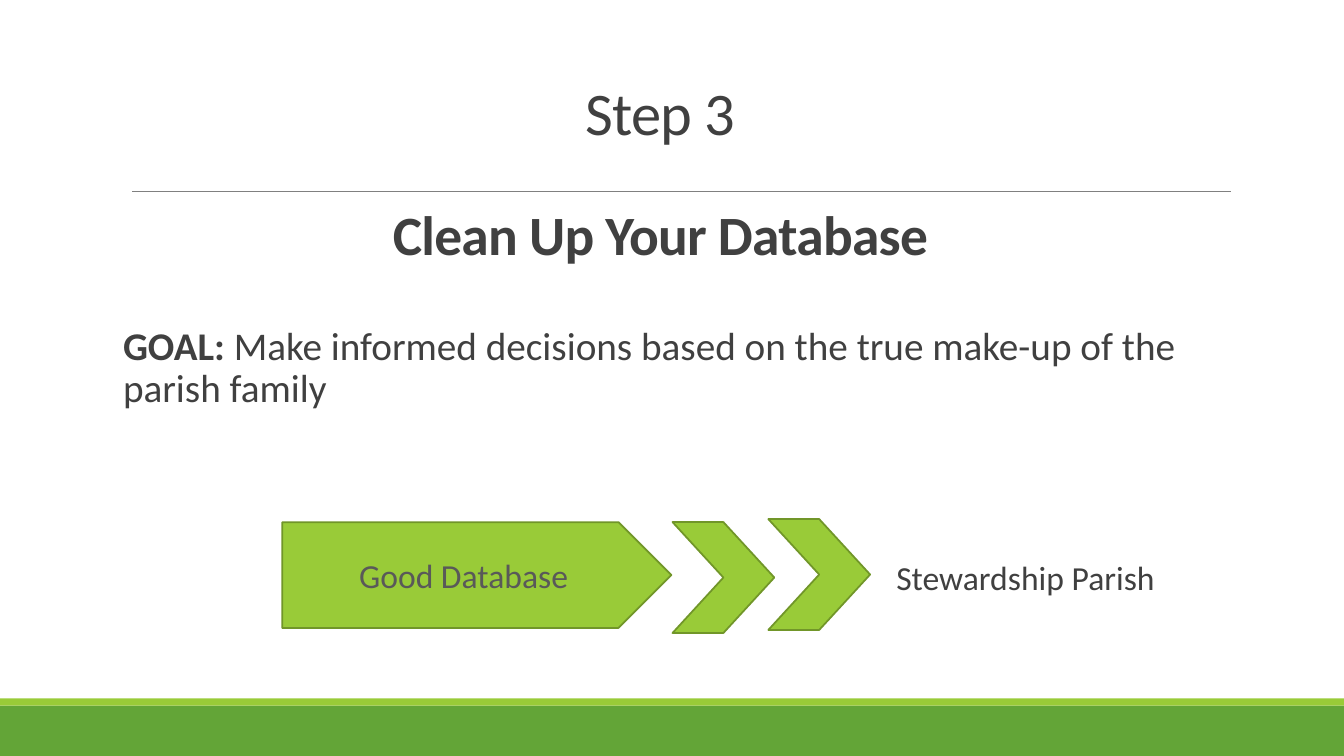
from pptx import Presentation
from pptx.dml.color import RGBColor
from pptx.enum.shapes import MSO_CONNECTOR, MSO_SHAPE
from pptx.enum.text import MSO_ANCHOR, MSO_AUTO_SIZE, PP_ALIGN
from pptx.oxml.ns import qn
from pptx.util import Inches, Pt
from lxml.etree import SubElement

FOREST = RGBColor(0x63, 0xA5, 0x37)
LIME = RGBColor(0x99, 0xCB, 0x38)
OLIVE = RGBColor(0x71, 0x96, 0x29)
GRAY = RGBColor(0x80, 0x80, 0x80)
DARK = RGBColor(0x40, 0x40, 0x40)
LABEL = RGBColor(0x59, 0x59, 0x59)

TITLE_LINES = [("Step 3", 43.2, False, 0), ("Clean Up Your Database", 39.6, True, 45)]
GOAL = [("GOAL: ", True),
        ("Make informed decisions based on the true make-up of the parish family", False)]
RESULT = [("Stewardship Parish", False)]
BANDS = [(7, 0.5, FOREST), (6.93, 0.07, LIME)]
ARROWS = [
    (MSO_SHAPE.PENTAGON, (2.8, 5.18, 3.86, 1.05), "Good Database"),
    (MSO_SHAPE.CHEVRON, (6.67, 5.18, 1.01, 1.1), ""),
    (MSO_SHAPE.CHEVRON, (7.62, 5.15, 1.01, 1.1), ""),
]


def style_font(paragraph, size, color):
    paragraph.font.name = "Calibri"
    paragraph.font.size = Pt(size)
    paragraph.font.color.rgb = color


def add_filled_shape(slide, kind, box, fill):
    shape = slide.shapes.add_shape(kind, *map(Inches, box))
    shape.shadow.inherit = False
    shape.fill.solid()
    shape.fill.fore_color.rgb = fill
    shape.line.fill.background()
    return shape


def add_body(slide, box, runs, size, left_inset=0):
    frame = slide.shapes.add_textbox(*map(Inches, box)).text_frame
    frame.word_wrap = True
    frame.margin_left, frame.margin_right = Inches(left_inset), 0
    paragraph = frame.paragraphs[0]
    paragraph.line_spacing = 0.9
    style_font(paragraph, size, DARK)
    for text, bold in runs:
        run = paragraph.add_run()
        run.text = text
        run.font.bold = bold


def fill_title(title):
    title.left, title.top, title.width, title.height = map(Inches, (0.52, 2.31, 12.06, 1.08))
    frame = title.text_frame
    frame.word_wrap = True
    frame.auto_size = MSO_AUTO_SIZE.NONE
    frame.vertical_anchor = MSO_ANCHOR.BOTTOM
    frame.margin_bottom = Inches(0.74)
    frame.text = "\n".join(line[0] for line in TITLE_LINES)
    for paragraph, (_, size, bold, gap) in zip(frame.paragraphs, TITLE_LINES):
        paragraph.alignment = PP_ALIGN.CENTER
        paragraph.line_spacing = 0.85
        paragraph.space_before = Pt(gap)
        style_font(paragraph, size, DARK)
        paragraph.font.bold = bold
        paragraph.runs[0].font._element.set("spc", "-50")


def main():
    presentation = Presentation()
    presentation.slide_width = Inches(13.33)
    presentation.slide_height = Inches(7.5)
    slide = presentation.slides.add_slide(presentation.slide_layouts[5])

    for top, height, color in BANDS:
        add_filled_shape(slide, MSO_SHAPE.RECTANGLE, (0, top, 13.33, height), color)

    rule = slide.shapes.add_connector(
        MSO_CONNECTOR.STRAIGHT, *map(Inches, (1.31, 1.9, 12.21, 1.9)))
    rule.line.color.rgb = GRAY
    rule.line.width = Pt(0.5)
    SubElement(rule._element.spPr, qn("a:effectLst"))

    fill_title(slide.shapes.title)
    add_body(slide, (8.82, 5.52, 4.4, 0.68), RESULT, 24, 0.07)
    add_body(slide, (1.22, 3.19, 10.89, 1.45), GOAL, 28)

    for kind, box, text in ARROWS:
        arrow = add_filled_shape(slide, kind, box, LIME)
        arrow.line.color.rgb = OLIVE
        arrow.line.width = Pt(1.25)
        if text:
            arrow.text_frame.text = text
            arrow.text_frame.vertical_anchor = MSO_ANCHOR.MIDDLE
            paragraph = arrow.text_frame.paragraphs[0]
            paragraph.alignment = PP_ALIGN.CENTER
            style_font(paragraph, 24, LABEL)

    presentation.save("out.pptx")


if __name__ == "__main__":
    main()
